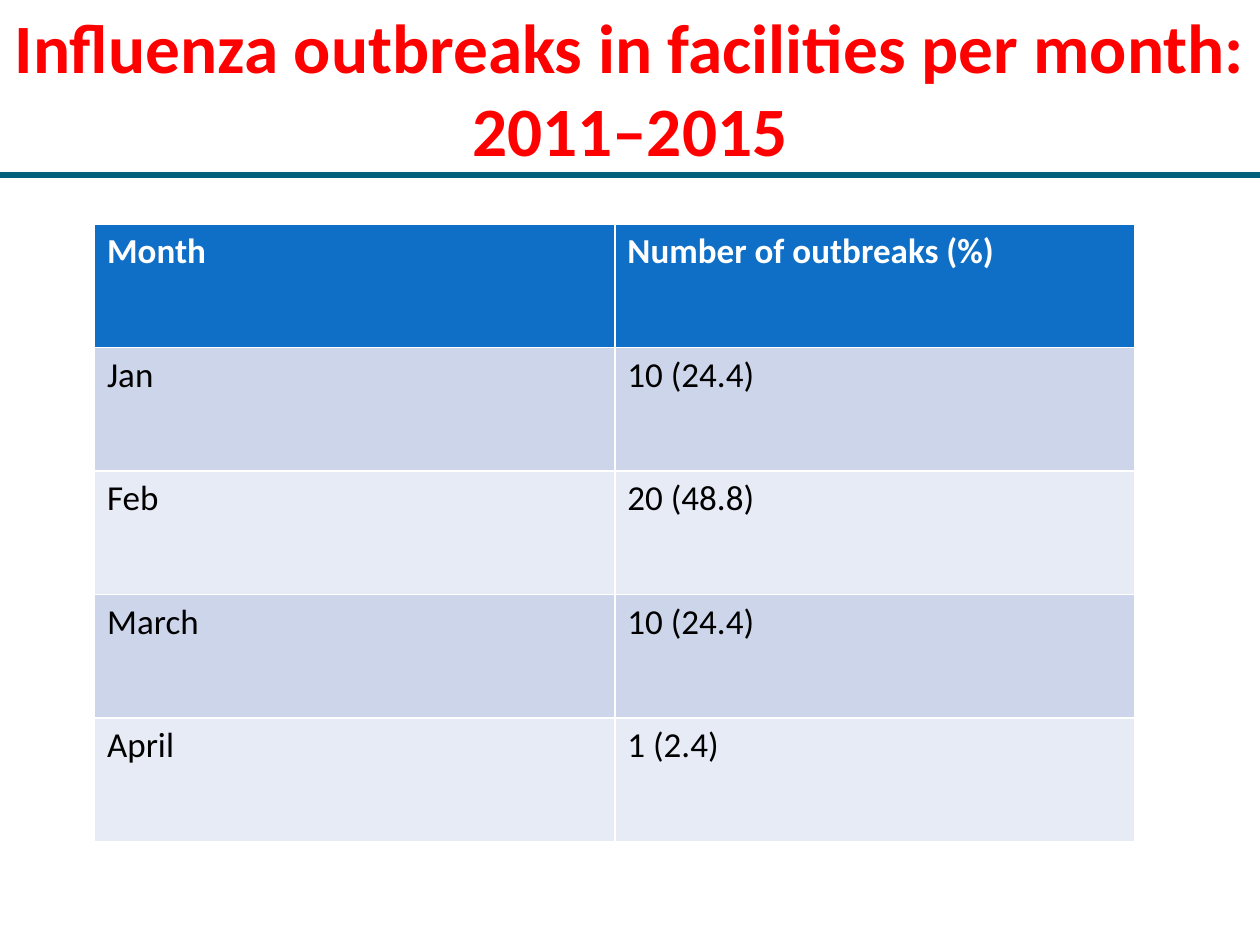
"""Build a slide with a table of monthly influenza outbreaks."""
from lxml.etree import SubElement
from pptx import Presentation
from pptx.dml.color import RGBColor as Rgb
from pptx.enum.shapes import MSO_CONNECTOR as Conn
from pptx.enum.text import MSO_ANCHOR as Anchor, MSO_AUTO_SIZE as Auto, PP_ALIGN as Align
from pptx.oxml.ns import qn
from pptx.util import Inches, Pt

TITLE = "Influenza outbreaks in facilities per month: 2011–2015"
ROWS = [
    ("Month", "Number of outbreaks (%)"),
    ("Jan", "10 (24.4)"),
    ("Feb", "20 (48.8)"),
    ("March", "10 (24.4)"),
    ("April", "1 (2.4)"),
]
HUES = {
    "title": "FF0000", "rule": "04617B", "head": "0F6FC6",
    "odd": "CCD5EA", "even": "E7EBF5", "white": "FFFFFF", "black": "000000",
}
WIDE, HIGH = 10, 7.5
COL, ROW = 4.13, 0.98
LEFT, TOP = 0.75, 1.78
LINE = 1.39


def hue(name):
    return Rgb.from_string(HUES[name])


def style(para, size, name, bold):
    for run in para.runs:
        font = run.font
        font.name, font.size, font.bold = "Calibri", Pt(size), bold
        font.color.rgb = hue(name)


def add_title(slide):
    title = slide.shapes.title
    title.left, title.top = Inches(0), Inches(0.07)
    title.width, title.height = Inches(WIDE), Inches(1.25)
    frame = title.text_frame
    frame.text = TITLE
    frame.word_wrap, frame.auto_size = True, Auto.NONE
    frame.vertical_anchor = Anchor.MIDDLE
    para = frame.paragraphs[0]
    para.alignment = Align.CENTER
    style(para, 39.6, "title", True)


def add_rule(slide):
    y = Inches(LINE)
    rule = slide.shapes.add_connector(Conn.STRAIGHT, 0, y, Inches(WIDE), y)
    rule.line.color.rgb, rule.line.width = hue("rule"), Pt(3)
    SubElement(rule.element.spPr, qn("a:effectLst"))


def add_grid(slide):
    rows, cols = len(ROWS), len(ROWS[0])
    table = slide.shapes.add_table(
        rows, cols, Inches(LEFT), Inches(TOP), Inches(cols * COL), Inches(rows * ROW)
    ).table
    for r, row in enumerate(ROWS):
        head = r == 0
        fill = "head" if head else "odd" if r % 2 else "even"
        for c, text in enumerate(row):
            cell = table.cell(r, c)
            cell.text_frame.text = text
            cell.fill.solid()
            cell.fill.fore_color.rgb = hue(fill)
            style(cell.text_frame.paragraphs[0], 20, "white" if head else "black", head)


def main():
    deck = Presentation()
    deck.slide_width, deck.slide_height = Inches(WIDE), Inches(HIGH)
    slide = deck.slides.add_slide(deck.slide_layouts[5])
    add_grid(slide)
    add_title(slide)
    add_rule(slide)
    deck.save("out.pptx")


if __name__ == "__main__":
    main()
